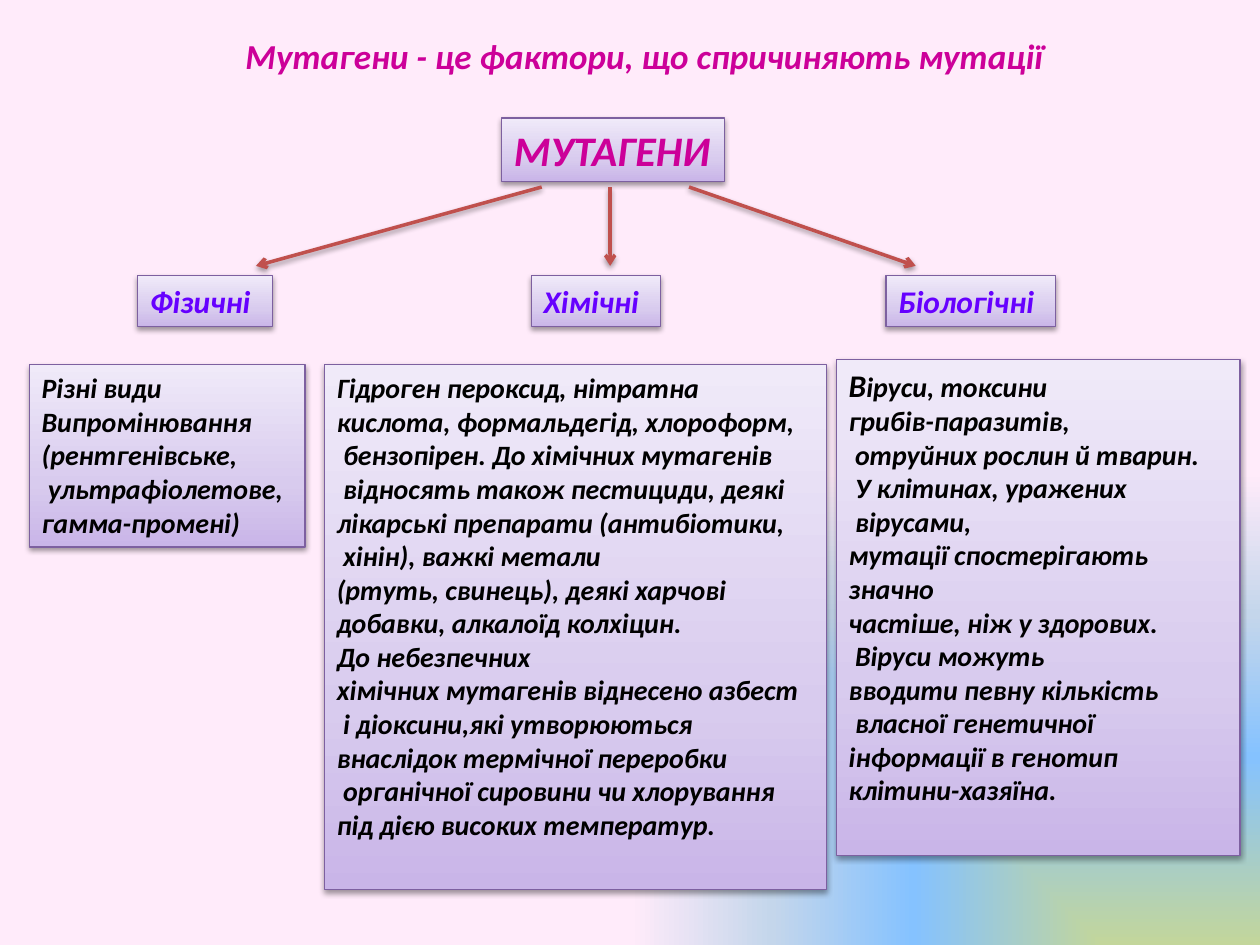
from lxml import etree
from pptx import Presentation
from pptx.dml.color import RGBColor
from pptx.enum.shapes import MSO_CONNECTOR, MSO_SHAPE
from pptx.enum.text import MSO_ANCHOR, PP_ALIGN
from pptx.oxml import parse_xml
from pptx.oxml.ns import nsdecls, qn
from pptx.util import Cm, Pt

COLORS = {
    "title": "CC0099", "group": "6600FF", "body": "000000",
    "border": "7D60A0", "arrow": "C0504D", "shadow": "000000",
}
PANEL_STOPS = {0: "C9B5E8", 35: "D8CBEE", 100: "F0EAF9"}
BACKGROUND_STOPS = {0: "C3D69B", 40: "85C2FF", 70: "C4D6EB", 100: "FFEBFA"}
SHADOW = (
    f'<a:effectLst {nsdecls("a")}>'
    '<a:outerShdw blurRad="40000" dist="20000" dir="5400000" rotWithShape="0">'
    f'<a:srgbClr val="{COLORS["shadow"]}"><a:alpha val="38000"/></a:srgbClr>'
    '</a:outerShdw></a:effectLst>'
)


def write(frame, text, size, color, align=PP_ALIGN.LEFT, wrap=True, initial_size=None):
    """Fill a frame with one paragraph per line; the first letter may be larger."""
    frame.word_wrap = wrap
    frame.vertical_anchor = MSO_ANCHOR.TOP
    for index, line in enumerate(text.split("\n")):
        paragraph = frame.add_paragraph() if index else frame.paragraphs[0]
        paragraph.alignment = align
        pieces = [(line, size)]
        if initial_size and index == 0:
            pieces = [(line[0], initial_size), (line[1:], size)]
        for piece, points in pieces:
            run = paragraph.add_run()
            run.text = piece
            run.font.name = "Calibri"
            run.font.size = Pt(points)
            run.font.bold = run.font.italic = True
            run.font.color.rgb = RGBColor.from_string(COLORS[color])


def set_stops(gradient, stops):
    """Replace the colour stops of a gradient fill element."""
    stop_list = gradient.find(qn("a:gsLst"))
    for old_stop in list(stop_list):
        stop_list.remove(old_stop)
    for percent, color in stops.items():
        stop = etree.SubElement(stop_list, qn("a:gs"), pos=str(percent * 1000))
        etree.SubElement(stop, qn("a:srgbClr"), val=color)


deck = Presentation()
deck.slide_width, deck.slide_height = Cm(25.4), Cm(19.05)
slide = deck.slides.add_slide(deck.slide_layouts[6])

# Background: gradient spreading from the lower right corner
slide.background.fill.gradient()
backdrop = slide.element.find(".//" + qn("a:gradFill"))
set_stops(backdrop, BACKGROUND_STOPS)
backdrop.replace(backdrop.find(qn("a:lin")), parse_xml(
    f'<a:path {nsdecls("a")} path="rect"><a:fillToRect l="100000" t="100000"/></a:path>'))

# Title
title = slide.shapes.add_textbox(Cm(3.18), Cm(0.58), Cm(19.63), Cm(2.82))
write(title.text_frame, "Мутагени - це фактори, що спричиняють мутації",
      size=20, color="title", align=PP_ALIGN.CENTER)

# Panels: heading, three groups, three descriptions
physical = """Різні види
Випромінювання
(рентгенівське,
 ультрафіолетове,
гамма-промені)"""
chemical = """Гідроген пероксид, нітратна
кислота, формальдегід, хлороформ,
 бензопірен. До хімічних мутагенів
 відносять також пестициди, деякі
лікарські препарати (антибіотики,
 хінін), важкі метали
(ртуть, свинець), деякі харчові
добавки, алкалоїд колхіцин.
До небезпечних
хімічних мутагенів віднесено азбест
 і діоксини,які утворюються внаслідок термічної переробки
 органічної сировини чи хлорування
під дією високих температур."""
biological = """Віруси, токсини
грибів-паразитів,
 отруйних рослин й тварин.
 У клітинах, уражених
 вірусами,
мутації спостерігають
значно
частіше, ніж у здорових.
 Віруси можуть
вводити певну кількість
 власної генетичної
інформації в генотип
клітини-хазяїна."""

heading_format = dict(size=24, color="title", wrap=False)
group_format = dict(size=18, color="group")
body_format = dict(size=16, color="body")
group_top, group_height = 5.56, 1.03

panels = [
    ("МУТАГЕНИ", (10.11, 2.38, 4.5, 1.28), heading_format),
    ("Фізичні", (2.77, group_top, 2.73, group_height), group_format),
    ("Хімічні", (10.71, group_top, 2.6, group_height), group_format),
    ("Біологічні", (17.86, group_top, 3.42, group_height), group_format),
    (physical, (0.59, 7.35, 5.56, 3.68), body_format),
    (chemical, (6.54, 7.35, 10.12, 10.59), body_format),
    (biological, (16.86, 7.25, 8.14, 10), dict(body_format, initial_size=18)),
]
for text, box, text_format in panels:
    panel = slide.shapes.add_shape(MSO_SHAPE.RECTANGLE, *map(Cm, box))
    panel.fill.gradient()
    panel.fill.gradient_angle = 90
    properties = panel.element.spPr
    set_stops(properties.find(qn("a:gradFill")), PANEL_STOPS)
    panel.line.color.rgb = RGBColor.from_string(COLORS["border"])
    panel.line.width = Pt(0.75)
    properties.append(parse_xml(SHADOW))
    write(panel.text_frame, text, **text_format)

# Arrows from the heading to the groups
arrow_top, arrow_bottom = 3.77, 5.36
for start, end in [(10.92, 5.16), (12.3, 12.3), (13.89, 18.46)]:
    arrow = slide.shapes.add_connector(
        MSO_CONNECTOR.STRAIGHT, Cm(start), Cm(arrow_top), Cm(end), Cm(arrow_bottom))
    arrow.line.color.rgb = RGBColor.from_string(COLORS["arrow"])
    arrow.line.width = Pt(2)
    properties = arrow.element.spPr
    etree.SubElement(properties.find(qn("a:ln")), qn("a:tailEnd"), type="arrow")
    properties.append(parse_xml(SHADOW))

deck.save("out.pptx")
